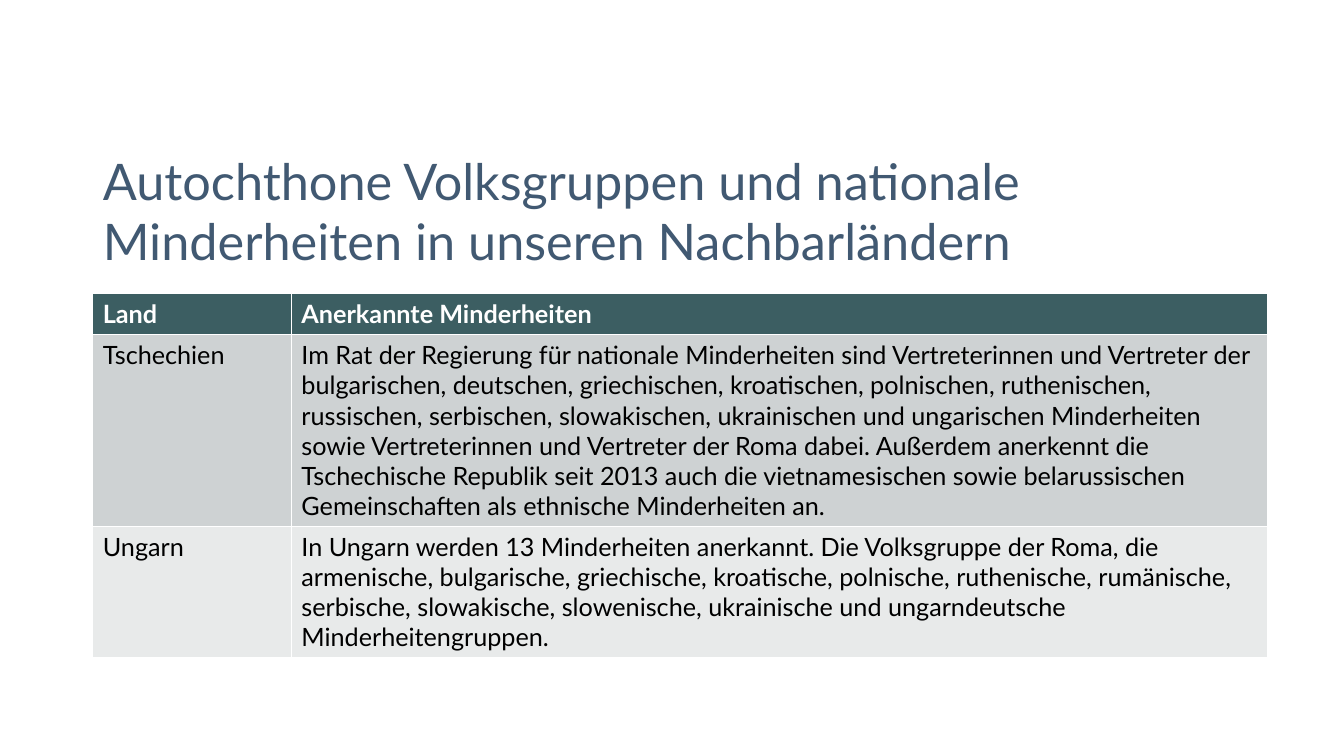
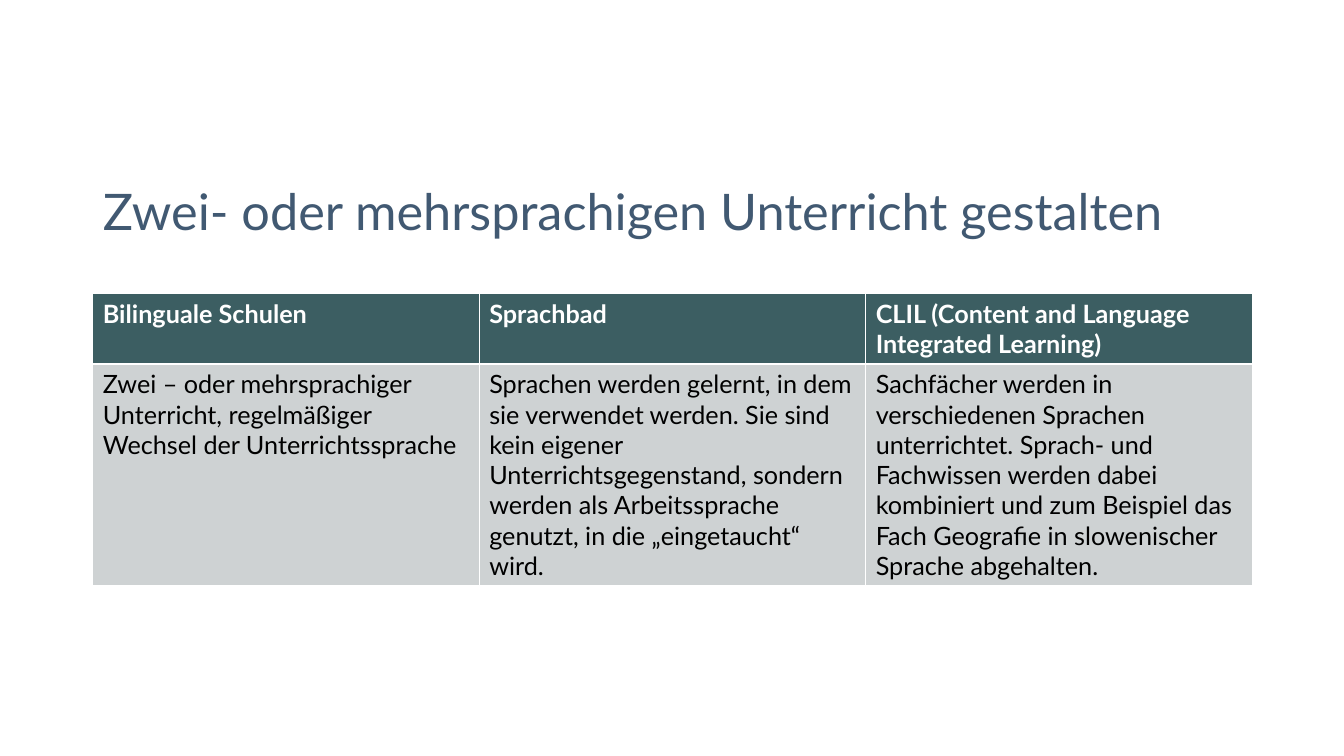
"""Build two slides on minorities and multilingual teaching, each with a title and a table."""
import pptx
import pptx.dml.color
import pptx.enum.text
import pptx.util

Inches = pptx.util.Inches
RGBColor = pptx.dml.color.RGBColor

TITLE_COLOR = RGBColor(0x41, 0x59, 0x72)
HEADER_FILL = RGBColor(0x3C, 0x5E, 0x62)
BAND_FILLS = (RGBColor(0xCE, 0xD2, 0xD3), RGBColor(0xE8, 0xEA, 0xEA))
WHITE = RGBColor(0xFF, 0xFF, 0xFF)
BLACK = RGBColor(0, 0, 0)

LEFT, TITLE_TOP, TITLE_WIDTH, TITLE_HEIGHT = 0.92, 1.45, 11.5, 1.27
TABLE_TOP = 2.91

TITLE_FONT = {"name": "Lato", "size": pptx.util.Pt(36), "bold": False}
HEADER_FONT = {"name": "Lato", "size": pptx.util.Pt(18), "bold": True}
BODY_FONT = {**HEADER_FONT, "bold": False}

SLIDES = [
    {
        "title": "Autochthone Volksgruppen und nationale Minderheiten in unseren Nachbarländern",
        "widths": [1.97, 9.68],
        "heights": [0.41, 1.9, 1.3],
        "rows": [
            ["Land", "Anerkannte Minderheiten"],
            ["Tschechien",
             "Im Rat der Regierung für nationale Minderheiten sind Vertreterinnen und "
             "Vertreter der bulgarischen, deutschen, griechischen, kroatischen, polnischen, "
             "ruthenischen, russischen, serbischen, slowakischen, ukrainischen und "
             "ungarischen Minderheiten sowie Vertreterinnen und Vertreter der Roma dabei. "
             "Außerdem anerkennt die Tschechische Republik seit 2013 auch die "
             "vietnamesischen sowie belarussischen Gemeinschaften als ethnische "
             "Minderheiten an."],
            ["Ungarn",
             "In Ungarn werden 13 Minderheiten anerkannt. Die Volksgruppe der Roma, die "
             "armenische, bulgarische, griechische, kroatische, polnische, ruthenische, "
             "rumänische, serbische, slowakische, slowenische, ukrainische und "
             "ungarndeutsche Minderheitengruppen."],
        ],
    },
    {
        "title": "Zwei- oder mehrsprachigen Unterricht gestalten",
        "widths": [TITLE_WIDTH / 3] * 3,
        "heights": [0.7, 2.2],
        "rows": [
            ["Bilinguale Schulen", "Sprachbad",
             "CLIL (Content and Language Integrated Learning)"],
            ["Zwei – oder mehrsprachiger Unterricht, regelmäßiger Wechsel der "
             "Unterrichtssprache",
             "Sprachen werden gelernt, in dem sie verwendet werden. Sie sind kein eigener "
             "Unterrichtsgegenstand, sondern werden als Arbeitssprache genutzt, in die "
             "„eingetaucht“ wird.",
             "Sachfächer werden in verschiedenen Sprachen unterrichtet. Sprach- und "
             "Fachwissen werden dabei kombiniert und zum Beispiel das Fach Geografie in "
             "slowenischer Sprache abgehalten."],
        ],
    },
]


def write(tf, text, style, color):
    p = tf.paragraphs[0]
    p.alignment = pptx.enum.text.PP_ALIGN.LEFT
    r = p.add_run()
    r.text = text
    for key, value in style.items():
        setattr(r.font, key, value)
    r.font.color.rgb = color


def add_title(s, text):
    sp = s.shapes.title
    sp.left, sp.top = Inches(LEFT), Inches(TITLE_TOP)
    sp.width, sp.height = Inches(TITLE_WIDTH), Inches(TITLE_HEIGHT)
    tf = sp.text_frame
    tf.word_wrap = True
    tf.auto_size = pptx.enum.text.MSO_AUTO_SIZE.NONE
    tf.vertical_anchor = pptx.enum.text.MSO_ANCHOR.MIDDLE
    write(tf, text, TITLE_FONT, TITLE_COLOR)


def add_table(s, rows, widths, heights):
    table = s.shapes.add_table(
        len(rows), len(widths), Inches(LEFT), Inches(TABLE_TOP),
        Inches(sum(widths)), Inches(sum(heights))).table
    for column, width in zip(table.columns, widths):
        column.width = Inches(width)
    for i, (row, height, texts) in enumerate(zip(table.rows, heights, rows)):
        row.height = Inches(height)
        if i == 0:
            fill, style, color = HEADER_FILL, HEADER_FONT, WHITE
        else:
            fill, style, color = BAND_FILLS[(i - 1) % 2], BODY_FONT, BLACK
        for cell, text in zip(row.cells, texts):
            cell.fill.solid()
            cell.fill.fore_color.rgb = fill
            write(cell.text_frame, text, style, color)


def main():
    prs = pptx.Presentation()
    prs.slide_width, prs.slide_height = Inches(13.33), Inches(7.5)
    for content in SLIDES:
        s = prs.slides.add_slide(prs.slide_layouts.get_by_name("Title Only"))
        add_title(s, content["title"])
        add_table(s, content["rows"], content["widths"], content["heights"])
    prs.save("out.pptx")


if __name__ == "__main__":
    main()
